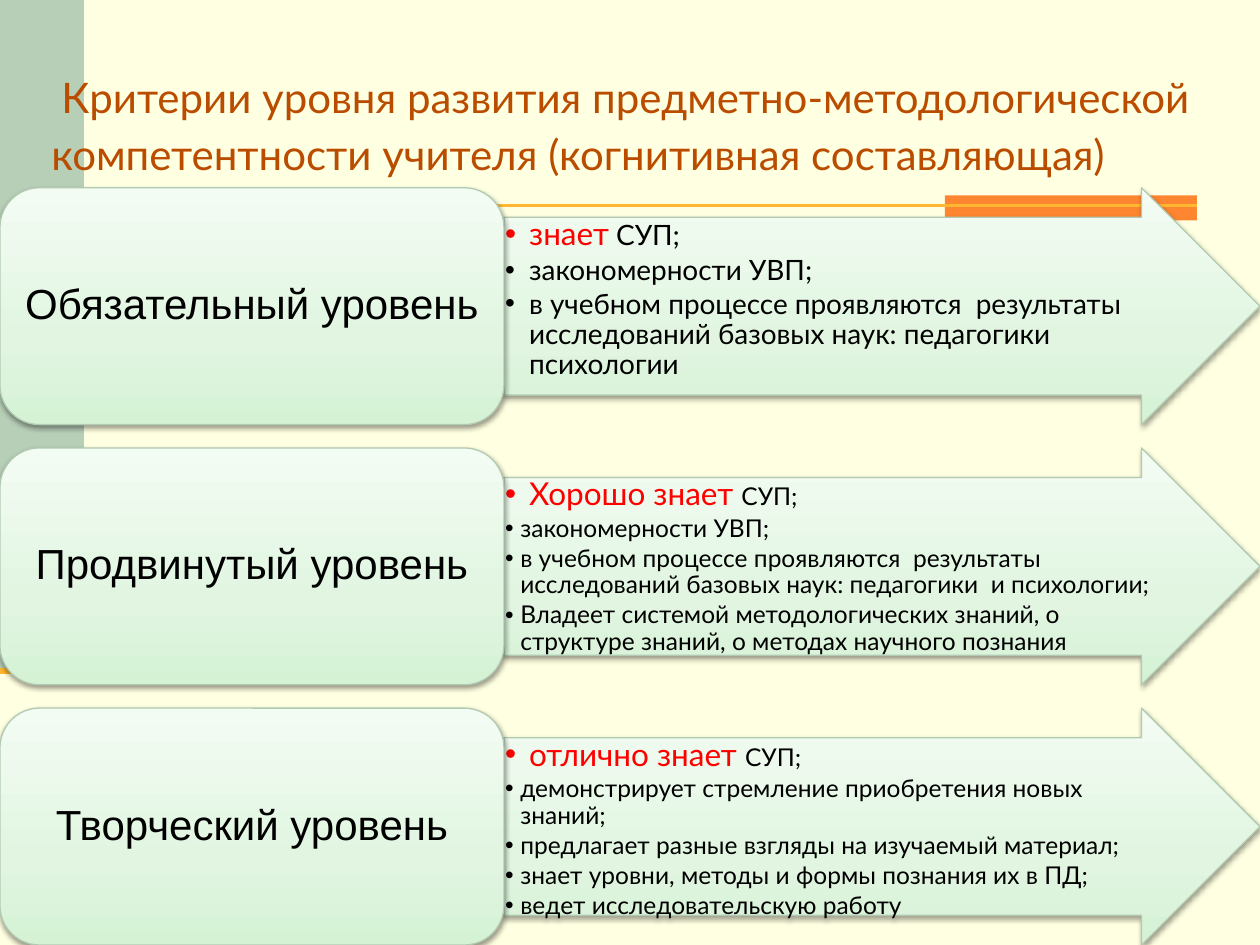
import pptx
import pptx.util
import pptx.dml.color
import pptx.enum.shapes
import pptx.enum.text
import pptx.oxml
import pptx.oxml.ns

Inches, Pt = pptx.util.Inches, pptx.util.Pt
RGB = pptx.dml.color.RGBColor
SHAPE = pptx.enum.shapes.MSO_SHAPE
ANCHOR = pptx.enum.text.MSO_ANCHOR
ALIGN = pptx.enum.text.PP_ALIGN

CREAM = RGB(0xFF, 0xFF, 0xE1)
SAGE = RGB(0xB7, 0xCE, 0xB7)
ORANGE = RGB(0xFF, 0x86, 0x30)
AMBER = RGB(0xFF, 0xB8, 0x2F)
RUST = RGB(0xBA, 0x4C, 0x00)
OUTLINE = RGB(0xB2, 0xCA, 0xB2)
RED = RGB(0xFF, 0x00, 0x00)
BLACK = RGB(0x00, 0x00, 0x00)
# Shares of the height, counted from the bottom up
MINT_STOPS = [(0, RGB(0xD5, 0xF2, 0xD5)), (35, RGB(0xE1, 0xF5, 0xE1)),
              (100, RGB(0xF3, 0xFC, 0xF3))]

WIDTH, HEIGHT = 10, 7.5
ROWS_TOP, ROW_HEIGHT = 1.49, 1.88
LABEL_SHARE = 0.4

TITLE = ("Критерии уровня развития предметно-методологической "
         "компетентности учителя (когнитивная составляющая)")

# Level, emphasised words, rest of the first point, text size, other points
LEVELS = [
    ("Обязательный уровень", "знает", " СУП;", 16, [
        "закономерности УВП;",
        "в учебном процессе проявляются  результаты исследований базовых "
        "наук: педагогики психологии"]),
    ("Продвинутый уровень", "Хорошо знает ", "СУП;", 14, [
        "закономерности УВП;",
        "в учебном процессе проявляются  результаты исследований базовых "
        "наук: педагогики  и психологии;",
        "Владеет системой методологических знаний, о структуре знаний, "
        "о методах научного познания"]),
    ("Творческий уровень", "отлично знает ", "СУП;", 14, [
        "демонстрирует стремление приобретения новых знаний;",
        "предлагает разные взгляды на изучаемый материал;",
        "знает уровни, методы и формы познания их в ПД;",
        "ведет исследовательскую работу"]),
]


def xml(tag, body="", attributes=""):
    return pptx.oxml.parse_xml(
        f'<a:{tag} {pptx.oxml.ns.nsdecls("a")} {attributes}>{body}</a:{tag}>')


def set_font(font, name, size, color):
    font.name, font.size = name, Pt(size)
    font.color.rgb = color


def set_margins(frame, left=0, top=0, right=0, bottom=0):
    frame.margin_left, frame.margin_top = Inches(left), Inches(top)
    frame.margin_right, frame.margin_bottom = Inches(right), Inches(bottom)


def add_block(slide, kind, box, color=None):
    block = slide.shapes.add_shape(kind, *map(Inches, box))
    block.shadow.inherit = False
    if color is not None:
        block.fill.solid()
        block.fill.fore_color.rgb = color
        block.line.fill.background()
    return block


def add_rule(slide, left, right, y, weight):
    rule = slide.shapes.add_connector(
        pptx.enum.shapes.MSO_CONNECTOR.STRAIGHT,
        Inches(left), Inches(y), Inches(right), Inches(y))
    rule.line.color.rgb = AMBER
    rule.line.width = Pt(weight)
    rule._element.spPr.append(xml("effectLst"))


def add_mint_block(slide, kind, box):
    """Shape with a mint gradient, thin outline and soft shadow below."""
    block = add_block(slide, kind, box)
    block.line.color.rgb = OUTLINE
    block.line.width = Pt(0.75)
    stops = "".join(f'<a:gs pos="{share * 1000}"><a:srgbClr val="{color}"/></a:gs>'
                    for share, color in MINT_STOPS)
    properties = block._element.spPr
    properties.find(pptx.oxml.ns.qn("a:prstGeom")).addnext(
        xml("gradFill", f'<a:gsLst>{stops}</a:gsLst><a:lin ang="16200000" scaled="0"/>'))
    properties.find(pptx.oxml.ns.qn("a:effectLst")).append(
        xml("outerShdw", '<a:srgbClr val="000000"><a:alpha val="38000"/></a:srgbClr>',
            f'blurRad="{Pt(3.1)}" dist="{Pt(1.6)}" dir="5400000" rotWithShape="0"'))
    block.text_frame.word_wrap = True
    return block


def add_backdrop(slide, width, height):
    slide.background.fill.solid()
    slide.background.fill.fore_color.rgb = CREAM
    band_width, band_height = width / 15, height * 0.71
    add_block(slide, SHAPE.RECTANGLE, (0, 0, band_width, band_height), SAGE)
    add_block(slide, SHAPE.RECTANGLE, (width * 0.75, 1.55, width * 0.2, 0.2), ORANGE)
    add_rule(slide, 0.42, width * 0.95, 1.63, 1.5)
    add_rule(slide, 0, band_width, band_height, 3.5)


def add_title(slide, box):
    frame = slide.shapes.add_textbox(*map(Inches, box)).text_frame
    frame.word_wrap = True
    frame.vertical_anchor = ANCHOR.BOTTOM
    set_margins(frame, left=0.1, right=0.1)
    title = frame.paragraphs[0]
    title.text = TITLE
    title.line_spacing = Pt(32.5)
    title._p.get_or_add_pPr().set("indent", str(Inches(0.08)))
    set_font(title.font, "Lato", 24, RUST)


def add_point(paragraph, indent):
    paragraph.line_spacing = 0.9
    paragraph.space_after = Pt(2)
    paragraph.alignment = ALIGN.LEFT
    properties = paragraph._p.get_or_add_pPr()
    properties.set("marL", str(Inches(indent)))
    properties.set("indent", str(-Inches(indent)))
    properties.append(xml("buFont", attributes='typeface="Arial"'))
    properties.append(xml("buChar", attributes='char="•"'))


def add_level(slide, box, level):
    """One row: arrow with the points, then the rounded label at its left."""
    name, emphasis, rest, size, points = level
    left, top, width, height = box
    label_width = width * LABEL_SHARE

    # The arrow's own text area ends a quarter of the way into its head
    arrow = add_mint_block(slide, SHAPE.RIGHT_ARROW,
                           (left + label_width, top, width - label_width, height))
    arrow.adjustments[0], arrow.adjustments[1] = 0.75, 0.5
    frame = arrow.text_frame
    frame.vertical_anchor = ANCHOR.TOP
    set_margins(frame, 0.01, 0.01, 0.01, 0.01)
    first = frame.paragraphs[0]
    add_point(first, 0.19)
    for words, run_size, color in ((emphasis, 18, RED), (rest, size, BLACK)):
        run = first.add_run()
        run.text = words
        set_font(run.font, "Lato", run_size, color)
    for words in points:
        point = frame.add_paragraph()
        point.text = words
        add_point(point, 0.19 if size == 16 else 0.12)
        set_font(point.font, "Lato", size, BLACK)

    label = add_mint_block(slide, SHAPE.ROUNDED_RECTANGLE,
                           (left, top, label_width, height))
    label.text_frame.vertical_anchor = ANCHOR.MIDDLE
    set_margins(label.text_frame)
    heading = label.text_frame.paragraphs[0]
    heading.text = name
    heading.alignment = ALIGN.CENTER
    heading.line_spacing = 0.9
    set_font(heading.font, "Arial", 24, BLACK)


def main():
    deck = pptx.Presentation()
    deck.slide_width, deck.slide_height = Inches(WIDTH), Inches(HEIGHT)
    slide = deck.slides.add_slide(deck.slide_layouts[6])
    add_backdrop(slide, WIDTH, HEIGHT)
    add_title(slide, (0.31, 0.3, 9.47, 1.12))
    # Rows spread evenly down to the bottom edge
    pitch = (HEIGHT - ROWS_TOP - ROW_HEIGHT) / (len(LEVELS) - 1)
    for row, level in enumerate(LEVELS):
        add_level(slide, (0, ROWS_TOP + row * pitch, WIDTH, ROW_HEIGHT), level)
    deck.save("out.pptx")


if __name__ == "__main__":
    main()
